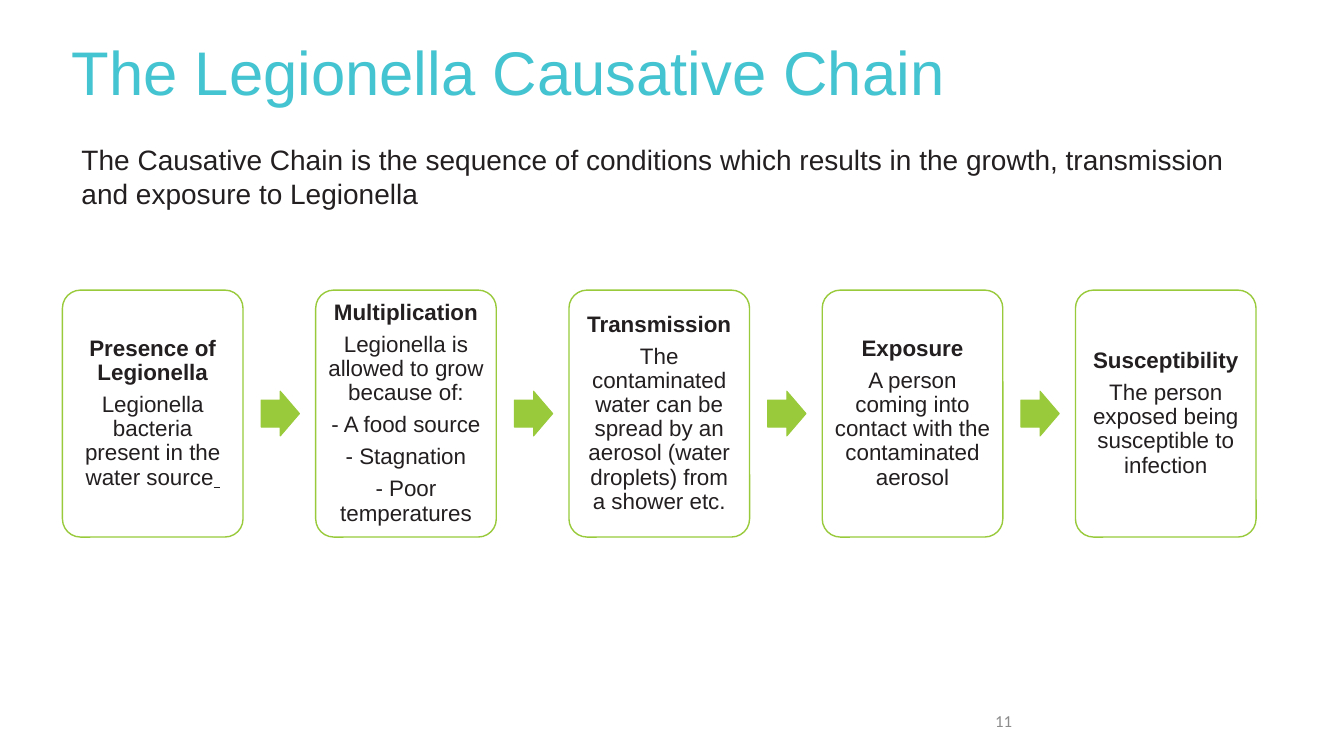
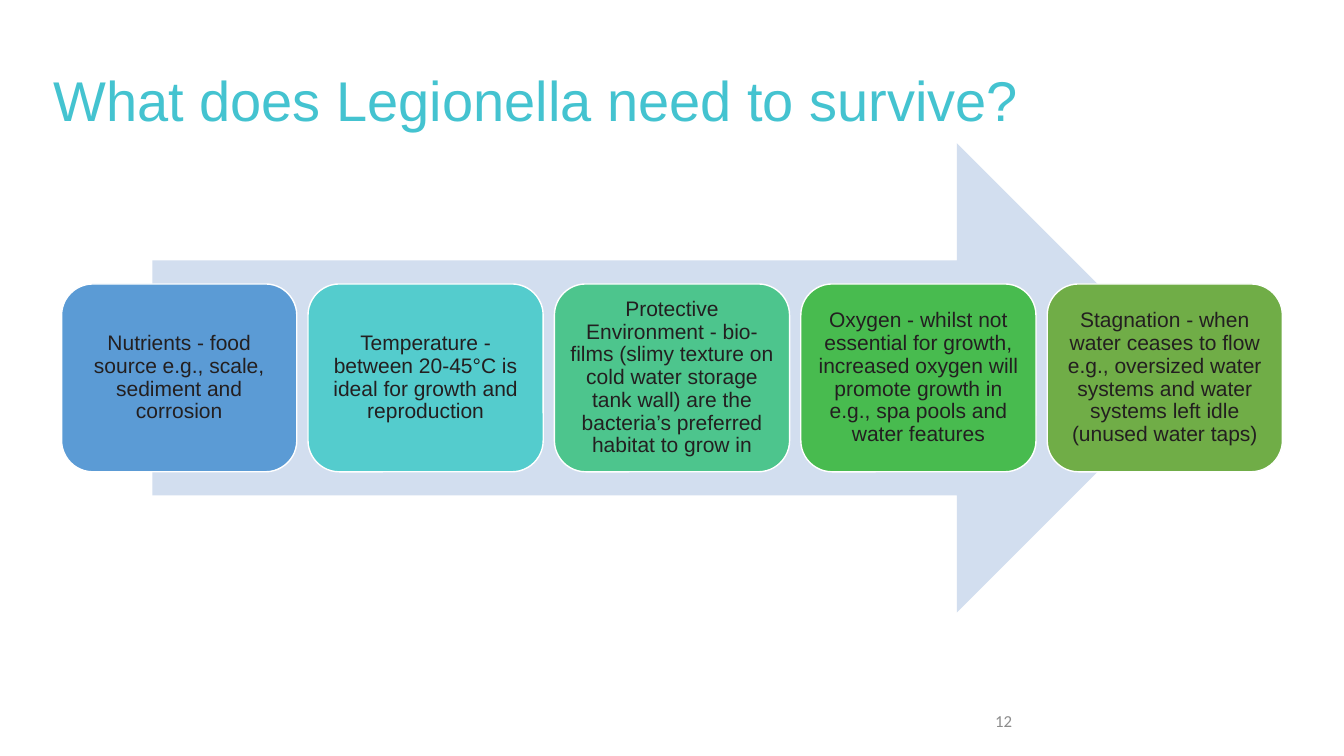
from lxml.etree import SubElement
from pptx import Presentation
from pptx.dml.color import RGBColor
from pptx.enum.shapes import MSO_SHAPE
from pptx.enum.text import MSO_ANCHOR, MSO_AUTO_SIZE, PP_ALIGN
from pptx.oxml.ns import qn
from pptx.util import Pt

COLOURS = {
    "title": "44C3D0",
    "text": "231F20",
    "number": "8C8C8C",
    "chain": "99CA3C",
    "band": "D2DEEF",
    "outline": "FFFFFF",
    "nutrients": "5B9BD5",
    "temperature": "54CCCD",
    "environment": "4DC58D",
    "oxygen": "48BB4F",
    "stagnation": "70AD47",
}
FONT = "Arial"
FIRST_NUMBER = 11

# Each link of the chain: heading, then paragraphs
LINKS = [
    ("Presence of Legionella", ["Legionella bacteria present in the water source"]),
    ("Multiplication", ["Legionella is allowed to grow because of:", "- A food source",
                        "- Stagnation", "- Poor temperatures"]),
    ("Transmission", ["The contaminated water can be spread by an aerosol "
                      "(water droplets) from a shower etc."]),
    ("Exposure", ["A person coming into contact with the contaminated aerosol"]),
    ("Susceptibility", ["The person exposed being susceptible to infection"]),
]

NEEDS = [
    ("nutrients", "Nutrients - food source e.g., scale, sediment and corrosion"),
    ("temperature", "Temperature - between 20-45°C is ideal for growth and reproduction"),
    ("environment", "Protective Environment - bio-films (slimy texture on cold water "
                    "storage tank wall) are the bacteria’s preferred habitat to grow in"),
    ("oxygen", "Oxygen - whilst not essential for growth, increased oxygen will "
               "promote growth in e.g., spa pools and water features"),
    ("stagnation", "Stagnation - when water ceases to flow e.g., oversized water "
                   "systems and water systems left idle (unused water taps)"),
]


def rgb(name):
    return RGBColor.from_string(COLOURS[name])


def style_font(font, size, colour, name=FONT):
    font.name, font.size = name, Pt(size)
    font.color.rgb = rgb(colour)


def add_run(paragraph, text, size, colour="text", bold=False):
    run = paragraph.add_run()
    run.text = text
    style_font(run.font, size, colour)
    run.font.bold = bold
    return run


def add_shape(slide, kind, box, fill=None, line=None, line_width=1):
    shape = slide.shapes.add_shape(kind, *map(Pt, box))
    shape.shadow.inherit = False
    if fill:
        shape.fill.solid()
        shape.fill.fore_color.rgb = rgb(fill)
    else:
        shape.fill.background()
    if line:
        shape.line.color.rgb = rgb(line)
        shape.line.width = Pt(line_width)
    else:
        shape.line.fill.background()
    return shape


def add_card(slide, box, inset, fill, line):
    """Rounded card with centred text; returns the shape."""
    card = add_shape(slide, MSO_SHAPE.ROUNDED_RECTANGLE, box, fill, line)
    frame = card.text_frame
    frame.word_wrap = True
    frame.vertical_anchor = MSO_ANCHOR.MIDDLE
    frame.margin_left = frame.margin_right = Pt(inset)
    frame.margin_top = frame.margin_bottom = Pt(inset)
    return card


def add_card_paragraph(card, text, size, first=False, bold=False):
    frame = card.text_frame
    paragraph = frame.paragraphs[0] if first else frame.add_paragraph()
    paragraph.alignment = PP_ALIGN.CENTER
    paragraph.line_spacing = 0.9
    paragraph.space_after = Pt(0.35 * size)
    add_run(paragraph, text, size, bold=bold)
    return paragraph


def add_titled_slide(presentation, title, box, size):
    slide = presentation.slides.add_slide(presentation.slide_layouts[5])
    # Title
    shape = slide.shapes.title
    shape.left, shape.top, shape.width, shape.height = map(Pt, box)
    frame = shape.text_frame
    frame.auto_size = MSO_AUTO_SIZE.NONE
    frame.vertical_anchor = MSO_ANCHOR.MIDDLE
    paragraph = frame.paragraphs[0]
    paragraph.alignment = PP_ALIGN.LEFT
    paragraph.line_spacing = 0.9
    add_run(paragraph, title, size, "title")
    add_slide_number(slide, FIRST_NUMBER + len(presentation.slides) - 1)
    return slide


def add_slide_number(slide, number):
    box = slide.shapes.add_textbox(Pt(642), Pt(500.5), Pt(88), Pt(28.8))
    frame = box.text_frame
    frame.word_wrap = True
    frame.vertical_anchor = MSO_ANCHOR.MIDDLE
    paragraph = frame.paragraphs[0]
    paragraph.alignment = PP_ALIGN.RIGHT
    run = paragraph.add_run()
    run.text = str(number)
    style_font(run.font, 12, "number", "Calibri")
    # Turn the run into a live slide number field
    field = SubElement(paragraph._p, qn("a:fld"), type="slidenum",
                       id="{B6F15528-21DE-4FAA-801E-634DDDAF4B2B}")
    field.extend(list(run._r))
    paragraph._p.remove(run._r)


def add_intro(slide, box, text):
    frame = slide.shapes.add_textbox(*map(Pt, box)).text_frame
    frame.word_wrap = True
    add_run(frame.paragraphs[0], text, 20)


def add_chain(slide, box):
    """Outlined cards in a row with a small arrow in each gap."""
    left, top, width, height = box
    card_width, arrow_width, arrow_height = 129, 27.4, 32
    pitch = (width - card_width) / (len(LINKS) - 1)
    for index, (heading, texts) in enumerate(LINKS):
        x = left + index * pitch
        card = add_card(slide, (x, top, card_width, height), 5, None, "chain")
        card.adjustments[0] = 0.1
        add_card_paragraph(card, heading, 16, first=True, bold=True)
        for text in texts:
            paragraph = add_card_paragraph(card, text, 16)
        if index == 0:
            add_run(paragraph, " ", 16).font.underline = True
        if index < len(LINKS) - 1:
            arrow_box = (x + 1.1 * card_width, top + (height - arrow_height) / 2,
                         arrow_width, arrow_height)
            arrow = add_shape(slide, MSO_SHAPE.RIGHT_ARROW, arrow_box,
                              "chain", "chain", 0.75)
            arrow.adjustments[0] = 0.6


def add_needs(slide, box):
    """Filled cards in a row over one wide arrow."""
    left, top, width, height = box
    band_width, card_width, card_height = 742.3, 168, 0.4 * height
    band_box = (left + (width - band_width) / 2, top, band_width, height)
    add_shape(slide, MSO_SHAPE.RIGHT_ARROW, band_box, "band")
    pitch = (width - card_width) / (len(NEEDS) - 1)
    for index, (colour, text) in enumerate(NEEDS):
        card_box = (left + index * pitch, top + (height - card_height) / 2,
                    card_width, card_height)
        card = add_card(slide, card_box, 4.5, colour, "outline")
        add_card_paragraph(card, text, 15, first=True)


def main():
    presentation = Presentation()
    presentation.slide_width, presentation.slide_height = Pt(960), Pt(540)
    presentation.element.set("firstSlideNum", str(FIRST_NUMBER))

    # Causative chain
    slide = add_titled_slide(presentation, "The Legionella Causative Chain",
                             (44, 9.4, 828, 89.3), 44)
    add_intro(slide, (51.1, 98.6, 838.8, 55.4),
              "The Causative Chain is the sequence of conditions which results in "
              "the growth, transmission and exposure to Legionella")
    add_chain(slide, (44.6, 207.2, 852.6, 176.4))

    # Conditions for survival
    slide = add_titled_slide(presentation, "What does Legionella need to survive?",
                             (31, 17.3, 843.8, 113.8), 40)
    add_needs(slide, (44, 102.2, 872, 335.5))

    presentation.save("out.pptx")


if __name__ == "__main__":
    main()
